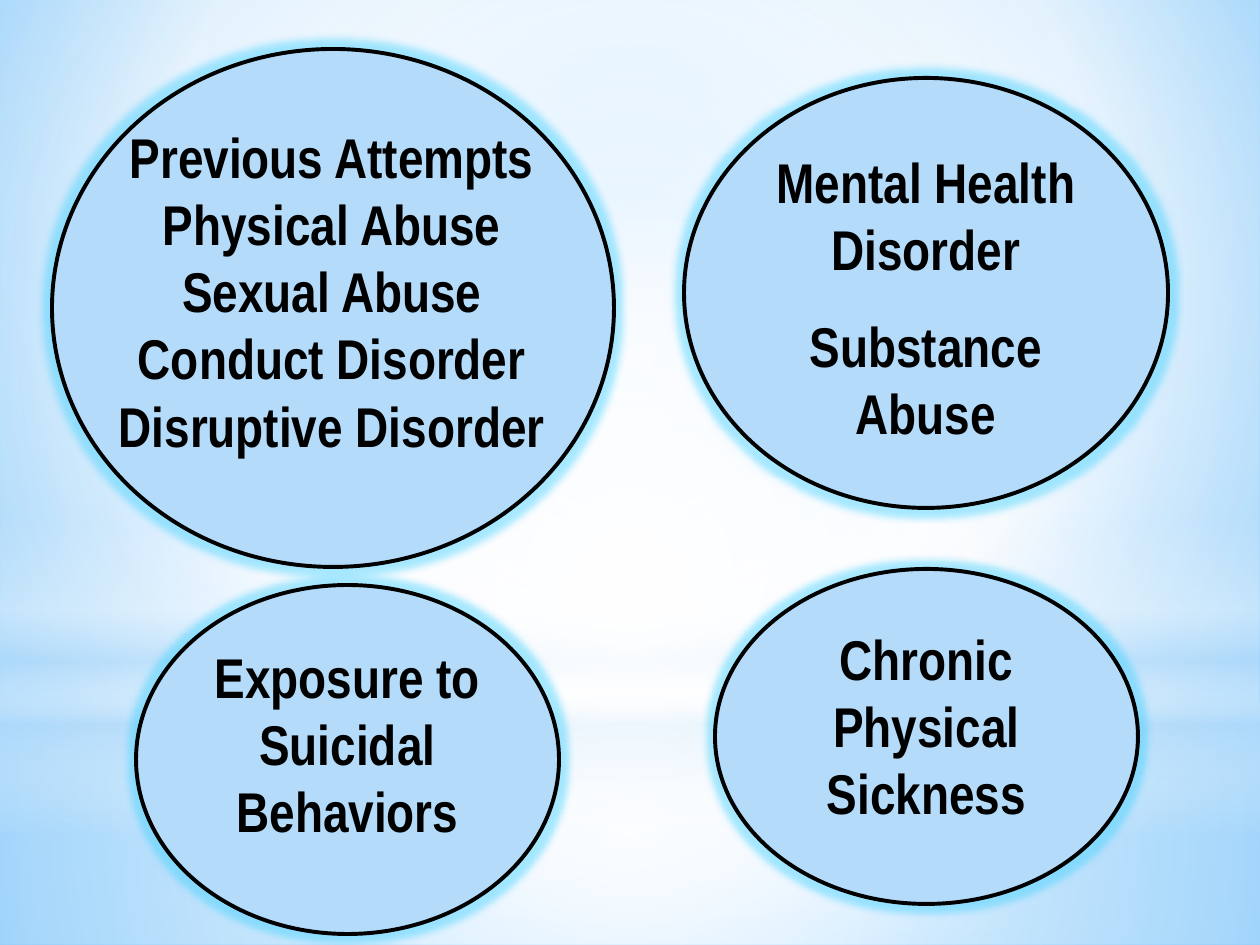
from lxml.etree import SubElement
from pptx import Presentation
from pptx.dml.color import RGBColor
from pptx.enum.shapes import MSO_SHAPE as SHAPE
from pptx.enum.text import MSO_ANCHOR as ANCHOR, PP_ALIGN as ALIGN
from pptx.oxml.ns import qn
from pptx.util import Emu, Pt

WIDTH, HEIGHT = 1260, 945
PALE, WHITE, BLACK, GLOW = "B4DCFA", "FFFFFF", "000000", "40D0FF"
CENTRE = (50, 50, 50, 50)

BACKDROP_STOPS = [(0, "9ED5FF", 100), (60, WHITE, 100), (100, "5BB9FF", 100)]
# shape, box, stops as (position, colour, opacity), focus (None for a vertical blend)
HAZE = [
    (SHAPE.RECTANGLE, (0, 703, WIDTH, 242),
     [(0, WHITE, 91), (37, WHITE, 76), (100, PALE, 79)], CENTRE),
    (SHAPE.RECTANGLE, (0, 0, WIDTH, 703),
     [(0, WHITE, 89), (48, WHITE, 62), (100, PALE, 79)], CENTRE),
    (SHAPE.RECTANGLE, (0, 519, WIDTH, 315),
     [(0, WHITE, 0), (29, WHITE, 30), (45, PALE, 40),
      (55, WHITE, 26), (65, PALE, 60), (100, WHITE, 0)], None),
    (SHAPE.OVAL, (0, 220, WIDTH, 703),
     [(0, WHITE, 100), (56, WHITE, 0)], CENTRE),
]

HISTORY_BOX = (52, 49, 562, 518)
HISTORY = ["Previous Attempts", "Physical Abuse", "Sexual Abuse",
           "Conduct Disorder", "Disruptive Disorder"]
RISKS = [
    ((684, 78, 484, 430), ["Mental Health Disorder", "Substance Abuse"]),
    ((136, 585, 423, 349), ["Exposure to Suicidal Behaviors"]),
    ((715, 569, 423, 335), ["Chronic Physical Sickness"]),
]


def px(length):
    return Emu(round(length * 914400 / 126))


def color(value):
    return RGBColor.from_string(value)


def add_color(parent, value, opacity):
    node = SubElement(parent, qn("a:srgbClr"), val=value)
    if opacity < 100:
        SubElement(node, qn("a:alpha"), val=str(opacity * 1000))


def set_gradient(fill, owner, stops, focus):
    """Swap the solid fill inside owner for a gradient; focus is left, top, right, bottom."""
    fill.solid()
    solid = owner.find(qn("a:solidFill"))
    gradient = SubElement(owner, qn("a:gradFill"), rotWithShape="1")
    owner.replace(solid, gradient)
    stop_list = SubElement(gradient, qn("a:gsLst"))
    for position, value, opacity in stops:
        stop = SubElement(stop_list, qn("a:gs"), pos=str(position * 1000))
        add_color(stop, value, opacity)
    if focus is None:
        SubElement(gradient, qn("a:lin"), ang="5400000", scaled="0")
        return
    shade = SubElement(gradient, qn("a:path"), path="circle")
    edges = {side: str(share * 1000) for side, share in zip("ltrb", focus)}
    SubElement(shade, qn("a:fillToRect"), **edges)


def add_plain_shape(page, kind, box):
    shape = page.shapes.add_shape(kind, *map(px, box))
    shape.shadow.inherit = False
    shape.line.fill.background()
    return shape


def write_text(frame, lines, size=32, font="Arial Narrow", ink=BLACK, gap=0):
    frame.word_wrap = True
    frame.vertical_anchor = ANCHOR.TOP
    for index, line in enumerate(lines):
        para = frame.add_paragraph() if index else frame.paragraphs[0]
        para.alignment = ALIGN.CENTER
        para.space_before = Pt(gap if index else 0)
        span = para.add_run()
        span.text = line
        span.font.name = font
        span.font.size = Pt(size)
        span.font.bold = True
        span.font.color.rgb = color(ink)


def draw_backdrop(page):
    fill = page.background.fill
    fill.solid()
    owner = page.element.find(".//" + qn("p:bgPr"))
    set_gradient(fill, owner, BACKDROP_STOPS, (20, 10, 20, 60))
    for kind, box, stops, focus in HAZE:
        shape = add_plain_shape(page, kind, box)
        set_gradient(shape.fill, shape.element.spPr, stops, focus)


def add_bubble(page, box):
    bubble = add_plain_shape(page, SHAPE.OVAL, box)
    bubble.fill.solid()
    bubble.fill.fore_color.rgb = color(PALE)
    bubble.line.color.rgb = color(BLACK)
    bubble.line.width = Pt(2.25)
    effects = bubble.element.spPr.find(qn("a:effectLst"))
    glow = SubElement(effects, qn("a:glow"), rad=str(px(14)))
    add_color(glow, GLOW, 45)
    return bubble


def add_history(page, box):
    left, top, width, height = box
    add_bubble(page, box)
    label = page.shapes.add_textbox(
        px(left + 10), px(top + 67), px(width - 22), px(height - 115))
    write_text(label.text_frame, HISTORY)


def main():
    deck = Presentation()
    deck.slide_width, deck.slide_height = px(WIDTH), px(HEIGHT)
    page = deck.slides.add_slide(deck.slide_layouts[6])
    draw_backdrop(page)
    add_history(page, HISTORY_BOX)
    for box, lines in RISKS:
        write_text(add_bubble(page, box).text_frame, lines, gap=17)
    deck.save("out.pptx")


if __name__ == "__main__":
    main()
